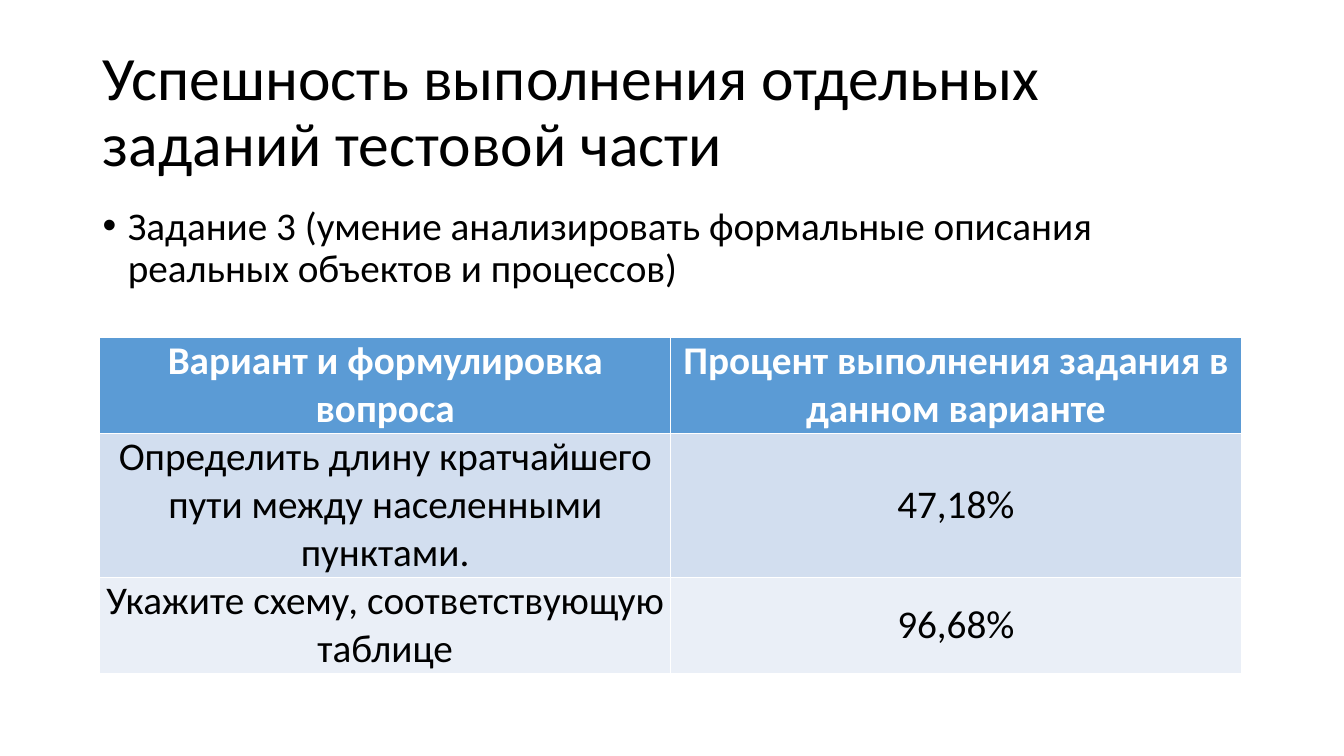
from lxml.etree import SubElement
from pptx import Presentation
from pptx.dml.color import RGBColor
from pptx.enum.text import MSO_ANCHOR, MSO_AUTO_SIZE, PP_ALIGN
from pptx.oxml.ns import qn
from pptx.util import Inches, Pt

BLACK = RGBColor(0x00, 0x00, 0x00)
WHITE = RGBColor(0xFF, 0xFF, 0xFF)
HEADER_BLUE = RGBColor(0x5B, 0x9B, 0xD5)
BAND_BLUE = RGBColor(0xD2, 0xDE, 0xEF)
BAND_PALE = RGBColor(0xEA, 0xEF, 0xF7)


def write_text(text_frame, text, size=28, color=BLACK, bold=False,
               align=PP_ALIGN.LEFT, line_spacing=1.0):
    paragraph = text_frame.paragraphs[0]
    paragraph.alignment = align
    paragraph.line_spacing = line_spacing
    run = paragraph.add_run()
    run.text = text
    run.font.name = "Calibri"
    run.font.size = Pt(size)
    run.font.bold = bold
    run.font.color.rgb = color
    return paragraph


presentation = Presentation()
presentation.slide_width = Inches(13.33)
presentation.slide_height = Inches(7.5)
slide = presentation.slides.add_slide(presentation.slide_layouts[5])

title = slide.shapes.title
title.left, title.top = Inches(0.92), Inches(0.4)
title.width, title.height = Inches(11.5), Inches(1.45)
title.text_frame.auto_size = MSO_AUTO_SIZE.NONE
title.text_frame.vertical_anchor = MSO_ANCHOR.MIDDLE
write_text(title.text_frame, "Успешность выполнения отдельных заданий тестовой части",
           size=44, line_spacing=0.9)

task = slide.shapes.add_textbox(Inches(0.92), Inches(2), Inches(11.5), Inches(1))
task.text_frame.word_wrap = True
task_paragraph = write_text(
    task.text_frame,
    "Задание 3 (умение анализировать формальные описания реальных объектов и процессов)",
    line_spacing=0.9)
task_paragraph.space_before = Pt(10)
properties = task_paragraph._p.get_or_add_pPr()
properties.set("marL", str(Inches(0.25)))
properties.set("indent", str(-Inches(0.25)))
SubElement(properties, qn("a:buFont"), typeface="Arial")
SubElement(properties, qn("a:buChar"), char="•")

rows = [
    (0.95, HEADER_BLUE, WHITE,
     ("Вариант и формулировка вопроса", "Процент выполнения задания в данном варианте")),
    (1.43, BAND_BLUE, BLACK,
     ("Определить длину кратчайшего пути между населенными пунктами.", "47,18%")),
    (0.95, BAND_PALE, BLACK,
     ("Укажите схему, соответствующую таблице", "96,68%")),
]
table = slide.shapes.add_table(len(rows), 2, Inches(0.99), Inches(3.35),
                               Inches(11.32), Inches(3.33)).table
for row_index, (height, fill, color, texts) in enumerate(rows):
    table.rows[row_index].height = Inches(height)
    for column_index, text in enumerate(texts):
        cell = table.cell(row_index, column_index)
        cell.fill.solid()
        cell.fill.fore_color.rgb = fill
        cell.vertical_anchor = MSO_ANCHOR.MIDDLE
        cell.margin_left = cell.margin_right = Inches(0.05)
        cell.margin_top = cell.margin_bottom = Inches(0)
        write_text(cell.text_frame, text, color=color, bold=row_index == 0,
                   align=PP_ALIGN.CENTER)

presentation.save("out.pptx")
